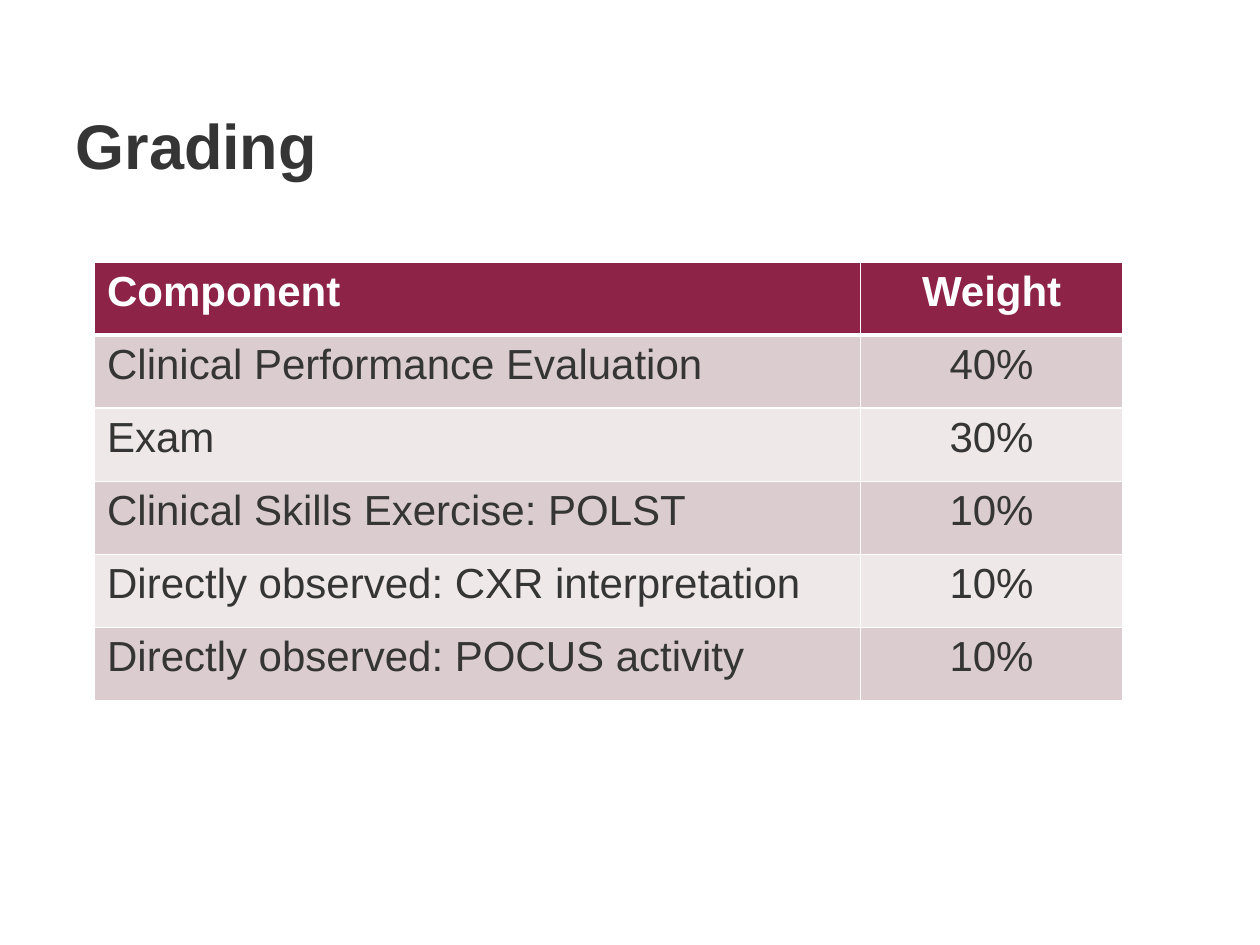
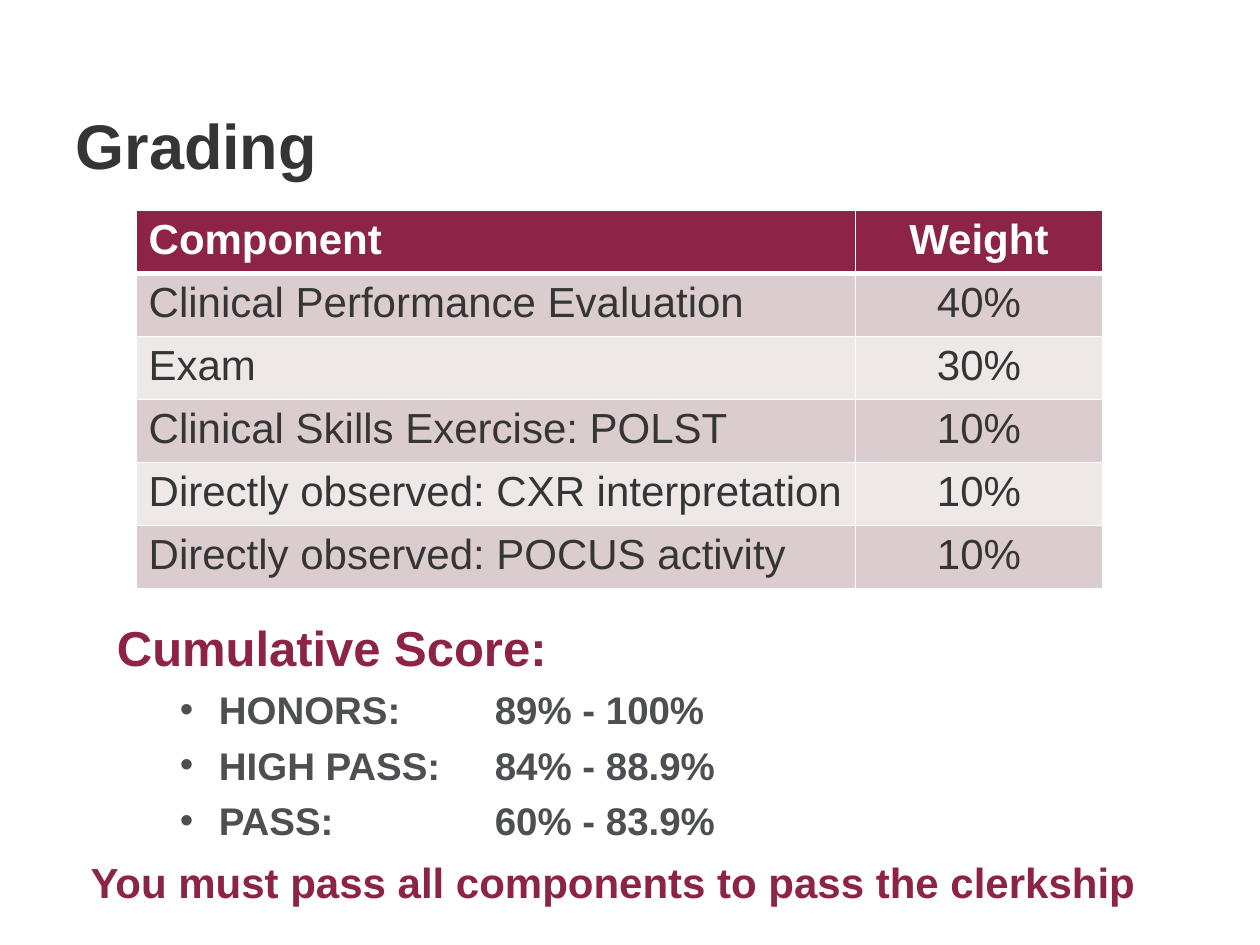
from lxml import etree
from pptx import Presentation
from pptx.dml.color import RGBColor
from pptx.enum.text import MSO_ANCHOR, PP_ALIGN
from pptx.oxml.ns import qn
from pptx.util import Inches, Pt

TITLE = "Grading"
COMPONENTS = [
    ("Component", "Weight"),
    ("Clinical Performance Evaluation", "40%"),
    ("Exam", "30%"),
    ("Clinical Skills Exercise: POLST", "10%"),
    ("Directly observed: CXR interpretation", "10%"),
    ("Directly observed: POCUS activity", "10%"),
]
SCORE_HEADING = "Cumulative Score:"
SCORES = [
    ("HONORS:", "89% - 100%"),
    ("HIGH PASS:", "84% - 88.9%"),
    ("PASS:", "60% - 83.9%"),
]
REQUIREMENT = "You must pass all components to pass the clerkship"

FONT = "Arial"
COLORS = {
    "maroon": "8D2346",
    "ink": "353535",
    "gray": "4D4F53",
    "white": "FFFFFF",
    "band_dark": "DBCDCF",
    "band_light": "EEE8E9",
}


def add_run(paragraph, text, size, color, bold=True):
    run = paragraph.add_run()
    run.text = text
    run.font.name = FONT
    run.font.size = Pt(size)
    run.font.bold = bold
    run.font.color.rgb = RGBColor.from_string(COLORS[color])


def add_grading_slide(prs):
    slide = prs.slides.add_slide(prs.slide_layouts[5])
    title = slide.shapes.title
    title.left, title.top = Inches(0.5), Inches(0.62)
    title.width, title.height = Inches(9), Inches(1.05)
    title.text_frame.vertical_anchor = MSO_ANCHOR.MIDDLE
    paragraph = title.text_frame.paragraphs[0]
    paragraph.alignment = PP_ALIGN.LEFT
    add_run(paragraph, TITLE, 36, "ink")
    return slide


def set_borders(cell, **widths):
    """Draw white cell borders; widths in points, keyed L, R, T, B."""
    properties = cell._tc.get_or_add_tcPr()
    for position, (side, width) in enumerate(widths.items()):
        line = etree.Element(qn(f"a:ln{side}"), w=str(Pt(width)))
        fill = etree.SubElement(line, qn("a:solidFill"))
        etree.SubElement(fill, qn("a:srgbClr"), val=COLORS["white"])
        properties.insert(position, line)


def add_weight_table(slide, left, top, column_widths, row_height):
    rows = len(COMPONENTS)
    table = slide.shapes.add_table(
        rows, len(column_widths), Inches(left), Inches(top),
        Inches(sum(column_widths)), Inches(row_height * rows)).table
    table.horz_banding = False
    for column, width in zip(table.columns, column_widths):
        column.width = Inches(width)
    for r, entries in enumerate(COMPONENTS):
        table.rows[r].height = Inches(row_height)
        header = r == 0
        fill = "maroon" if header else ("band_light", "band_dark")[r % 2]
        for c, text in enumerate(entries):
            cell = table.cell(r, c)
            cell.fill.solid()
            cell.fill.fore_color.rgb = RGBColor.from_string(COLORS[fill])
            set_borders(cell, L=1, R=1, T=3 if r == 1 else 1, B=3 if header else 1)
            paragraph = cell.text_frame.paragraphs[0]
            paragraph.alignment = PP_ALIGN.CENTER if c else PP_ALIGN.LEFT
            add_run(paragraph, text, 24, "white" if header else "ink", header)


def add_text_frame(slide, left, top, width, height):
    box = slide.shapes.add_textbox(*map(Inches, (left, top, width, height)))
    box.text_frame.word_wrap = True
    return box.text_frame


def set_bullet_and_tab(paragraph, margin, hanging, tab):
    properties = paragraph._p.get_or_add_pPr()
    properties.set("marL", str(Inches(margin)))
    properties.set("indent", str(-Inches(hanging)))
    etree.SubElement(properties, qn("a:buFont"), typeface=FONT)
    etree.SubElement(properties, qn("a:buChar"), char="•")
    tabs = etree.SubElement(properties, qn("a:tabLst"))
    etree.SubElement(tabs, qn("a:tab"), pos=str(Inches(tab)), algn="l")


def add_score_ranges(slide):
    frame = add_text_frame(slide, 0.83, 4.85, 8.33, 1.64)
    add_run(frame.paragraphs[0], SCORE_HEADING, 28, "maroon")
    for grade, score_range in SCORES:
        paragraph = frame.add_paragraph()
        set_bullet_and_tab(paragraph, margin=0.81, hanging=0.31, tab=3)
        paragraph.space_before = Pt(5.5)
        add_run(paragraph, f"{grade}\t{score_range}", 22, "gray")


def main():
    prs = Presentation()
    prs.slide_width, prs.slide_height = Inches(10), Inches(7.5)

    weights = add_grading_slide(prs)
    add_weight_table(weights, 0.75, 2.08, (6.08, 2.08), 0.58)

    scores = add_grading_slide(prs)
    add_weight_table(scores, 1.08, 1.67, (5.71, 1.96), 0.5)
    add_score_ranges(scores)
    requirement = add_text_frame(scores, 0.62, 6.75, 8.75, 0.5)
    add_run(requirement.paragraphs[0], REQUIREMENT, 24, "maroon")

    prs.save("out.pptx")


if __name__ == "__main__":
    main()
